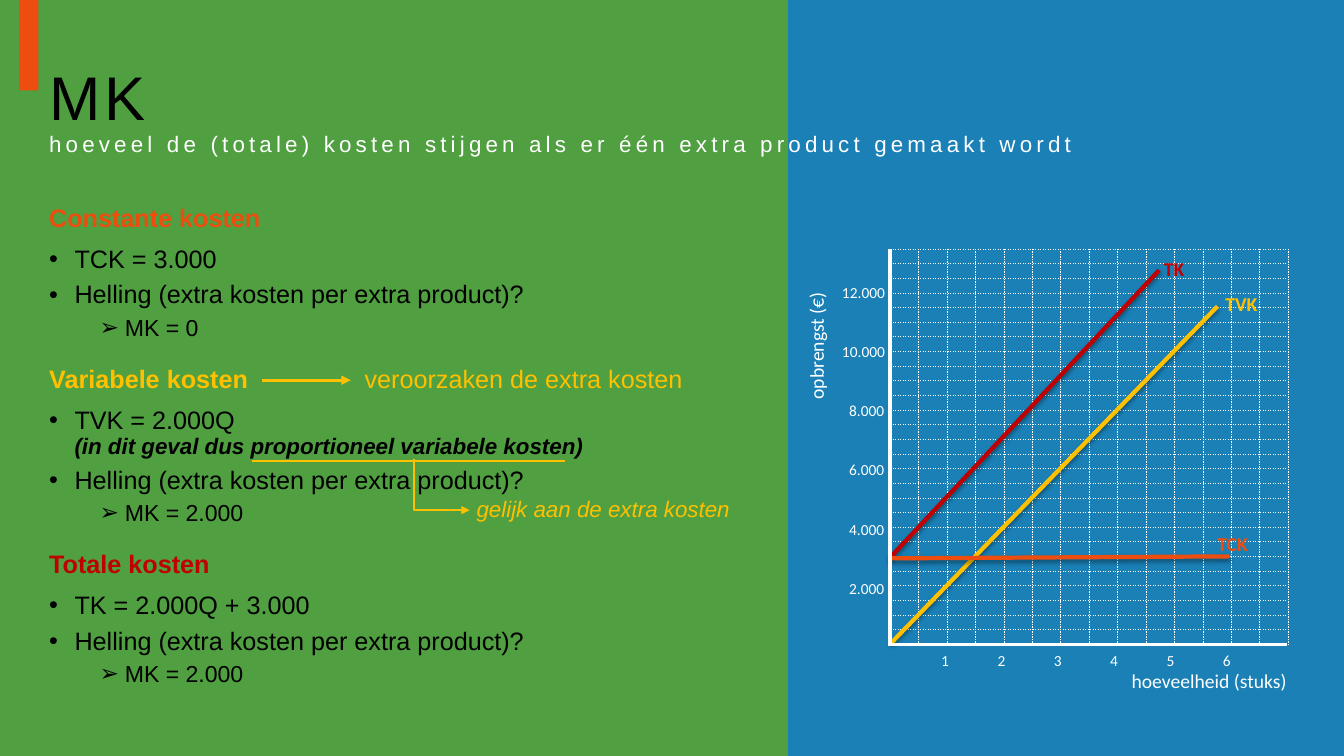
"""Build the slide on marginal costs (MK) with its cost diagram."""
from lxml.etree import SubElement
from pptx import Presentation
from pptx.dml.color import RGBColor
from pptx.enum.dml import MSO_LINE as Dash
from pptx.enum.shapes import MSO_CONNECTOR as Link, MSO_SHAPE as Preset
from pptx.enum.text import MSO_ANCHOR as Anchor, MSO_AUTO_SIZE as AutoSize, PP_ALIGN as Align
from pptx.oxml.ns import qn
from pptx.util import Cm, Pt

rgb = RGBColor.from_string
WHITE, BLACK, ORANGE, YELLOW, RED = "FFFFFF", "000000", "ED4D0F", "FFC000", "C00000"

deck = Presentation()
deck.slide_width, deck.slide_height = Cm(33.87), Cm(19.05)
slide = deck.slides.add_slide(deck.slide_layouts[6])
shapes = slide.shapes


def add_run(paragraph, text, colour, size, **font_format):
    run = paragraph.add_run()
    run.text = text
    run.font.color.rgb = rgb(colour)
    for name, value in {"name": "Arial", "size": Pt(size), **font_format}.items():
        setattr(run.font, name, value)
    return run


def draw_line(points, colour, width, kind=Link.STRAIGHT, dash=None, arrow=False, shadow=False):
    line = shapes.add_connector(kind, *[Cm(value) for value in points])
    line.line.color.rgb = rgb(colour)
    line.line.width = Pt(width)
    if dash:
        line.line.dash_style = dash
    properties = line._element.spPr
    if arrow:
        SubElement(properties.find(qn("a:ln")), qn("a:tailEnd"), type="triangle")
    effects = SubElement(properties, qn("a:effectLst"))
    if shadow:
        outer = SubElement(effects, qn("a:outerShdw"), blurRad="40000", dist="20000",
                           dir="5400000", rotWithShape="0")
        black = SubElement(outer, qn("a:srgbClr"), val=BLACK)
        SubElement(black, qn("a:alpha"), val="38000")
    return line


panels = [
    (0, 0, 19.86, 19.05, "258812", 80),
    (19.86, 0, 14.01, 19.05, "1A80B6", 100),
    (0.48, -0.64, 0.49, 2.92, ORANGE, 100),
]
for left, top, width, height, colour, opacity in panels:
    panel = shapes.add_shape(Preset.RECTANGLE, Cm(left), Cm(top), Cm(width), Cm(height))
    panel.shadow.inherit = False
    panel.fill.solid()
    panel.fill.fore_color.rgb = rgb(colour)
    panel.line.fill.background()
    if opacity < 100:
        tint = panel._element.spPr.find(qn("a:solidFill"))[0]
        SubElement(tint, qn("a:alpha"), val=str(opacity * 1000))

title = shapes.add_textbox(Cm(0.99), Cm(0.99), Cm(32.03), Cm(3.68)).text_frame
title.word_wrap = True
title.vertical_anchor = Anchor.MIDDLE
heading = title.paragraphs[0]
heading.line_spacing = 0.9
abbreviation = add_run(heading, "MK", BLACK, 44)
heading.add_line_break()
meaning = add_run(
    heading, "hoeveel de (totale) kosten stijgen als er één extra product gemaakt wordt", WHITE, 16)
for run in (abbreviation, meaning):
    run.font._element.set("spc", "300")

explanation = shapes.add_textbox(Cm(0.99), Cm(5.05), Cm(18.87), Cm(13.18)).text_frame
explanation.word_wrap = True
cost_types = [
    ("Constante kosten", ORANGE, 10, "TCK = 3.000", "", "MK = 0"),
    ("Variabele kosten", YELLOW, 18, "TVK = 2.000Q",
     "(in dit geval dus proportioneel variabele kosten)", "MK = 2.000"),
    ("Totale kosten", RED, 18, "TK = 2.000Q + 3.000", "", "MK = 2.000"),
]
paragraph = explanation.paragraphs[0]
for name, colour, gap, formula, remark, marginal in cost_types:
    rows = [
        (name, colour, 18, True, gap, "", 0),
        (formula, BLACK, 18, False, 10, "•", 0),
        ("Helling (extra kosten per extra product)?", BLACK, 18, False, 6, "•", 0),
        (marginal, BLACK, 16.5, False, 5, "➢", 1),
    ]
    for text, text_colour, size, bold, before, bullet, level in rows:
        if paragraph.runs:
            paragraph = explanation.add_paragraph()
        row_format = {"line_spacing": 0.9, "space_before": Pt(before), "level": level}
        for key, value in row_format.items():
            setattr(paragraph, key, value)
        add_run(paragraph, text, text_colour, size, bold=bold)
        if text == formula and remark:
            paragraph.add_line_break()
            add_run(paragraph, remark, BLACK, 16, bold=True, italic=True)
        if bullet:
            settings = paragraph._p.get_or_add_pPr()
            settings.set("marL", str(Cm(0.64 + 1.27 * level)))
            settings.set("indent", str(-Cm(0.64)))
            SubElement(settings, qn("a:buFont"), typeface="Arial")
            SubElement(settings, qn("a:buChar"), char=bullet)

grid_left, grid_right, grid_top, grid_bottom = 22.43, 32.41, 6.27, 16.23
row_count, column_count = 27, 14
row_gap = (grid_bottom - grid_top) / row_count
column_gap = 10.03 / column_count
for row in range(row_count + 1):
    y = grid_top + row * row_gap
    draw_line((grid_left, y, grid_right, y), WHITE, 0.25, dash=Dash.DASH)
for column in range(1, column_count + 1):
    x = grid_left + column * column_gap
    draw_line((x, grid_top, x, 16.28), WHITE, 0.25, dash=Dash.DASH)

draw_line((29.21, 6.81, 22.43, 14.05), RED, 3, shadow=True)
draw_line((30.68, 7.72, 22.45, 16.21), YELLOW, 3, shadow=True)
draw_line((grid_left, grid_bottom, 32.44, grid_bottom), WHITE, 2.25)
draw_line((30.99, 14.02, 22.4, 14.07), ORANGE, 3, shadow=True)
draw_line((grid_left, grid_top, grid_left, 16.28), WHITE, 2.25)

calibri = {"name": "Calibri"}
bold_calibri = {"name": "Calibri", "bold": True}
labels = [
    ("hoeveelheid (stuks)", 28.24, 16.74, 4.47, 0.86, WHITE, 14, calibri),
    ("opbrengst (€)", 18.95, 8.26, 3.25, 0.86, WHITE, 14, calibri),
    ("TK", 29.08, 6.35, 1.04, 0.86, RED, 14, bold_calibri),
    ("TVK", 30.63, 7.24, 1.32, 0.86, YELLOW, 14, bold_calibri),
    ("TCK", 30.43, 13.28, 1.27, 0.86, ORANGE, 14, bold_calibri),
    ("veroorzaken de extra kosten", 8.94, 9.04, 8.66, 1.02, YELLOW, 18, {}),
    ("gelijk aan de extra kosten", 11.76, 12.34, 6.99, 0.94, YELLOW, 16, {"italic": True}),
]
for step in range(1, 7):
    amount = f"{2 * step}.000"
    width = 1.42 if step < 5 else 1.6
    labels.append((amount, 22.57 - width, 15.95 - 1.49 * step, width, 0.74, WHITE, 11, calibri))
    labels.append((str(step), 22.05 + 1.42 * step, 16.28, 0.71, 0.74, WHITE, 11, calibri))
for text, left, top, width, height, colour, size, font_format in labels:
    label = shapes.add_textbox(Cm(left), Cm(top), Cm(width), Cm(height))
    label.text_frame.word_wrap = False
    label.text_frame.auto_size = AutoSize.SHAPE_TO_FIT_TEXT
    add_run(label.text_frame.paragraphs[0], text, colour, size, **font_format)
    if text.startswith("opbrengst"):
        label.rotation = 270
    if text.startswith("hoeveelheid"):
        label.text_frame.paragraphs[0].alignment = Align.CENTER

draw_line((6.6, 9.58, 8.84, 9.58), YELLOW, 2.25, arrow=True)
draw_line((6.35, 11.61, 14.25, 11.61), YELLOW, 1.5)
bend = draw_line((11.79, 11.51, 10.49, 12.9), YELLOW, 1.5, kind=Link.ELBOW, arrow=True)
bend_properties = bend._element.spPr
bend_properties.find(qn("a:xfrm")).set("rot", "16200000")
bend_properties.find(qn("a:prstGeom")).set("prst", "bentConnector2")

deck.save("out.pptx")
